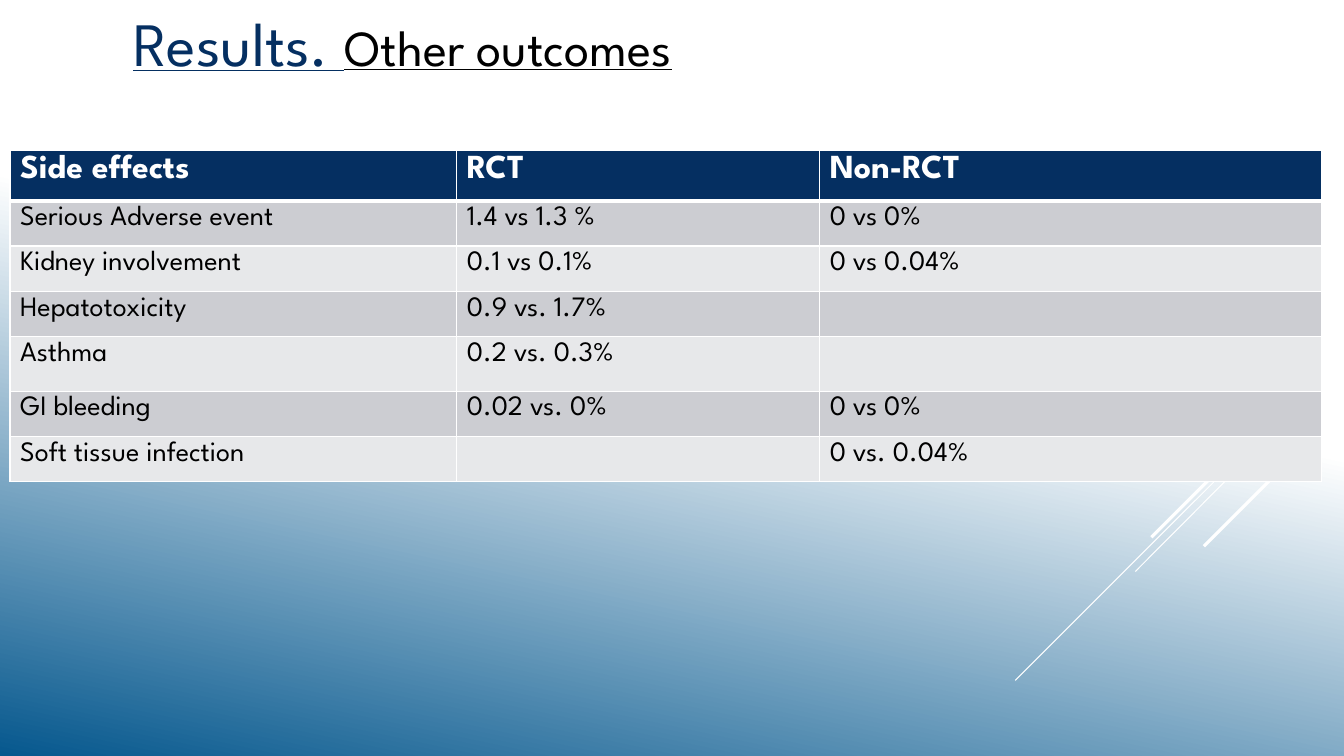
"""Build the slide with the table of side effects in RCT and non-RCT studies."""
from lxml.etree import SubElement
from pptx import Presentation
from pptx.dml.color import RGBColor
from pptx.enum.text import MSO_ANCHOR, MSO_AUTO_SIZE, PP_ALIGN
from pptx.oxml.ns import qn
from pptx.util import Inches, Pt

NAVY = RGBColor(0x05, 0x2F, 0x61)
BLUE = RGBColor(0x06, 0x58, 0x8E)
WHITE = RGBColor(0xFF, 0xFF, 0xFF)
BLACK = RGBColor(0x00, 0x00, 0x00)
DARK_BAND = RGBColor(0xCC, 0xCD, 0xD2)
LIGHT_BAND = RGBColor(0xE7, 0xE8, 0xEA)
FONT = "League Spartan"


def add_span(para, text, size, color, bold=False, underline=False):
    span = para.add_run()
    span.text = text
    span.font.name = FONT
    span.font.size = Pt(size)
    span.font.color.rgb = color
    span.font.bold = bold
    span.font.underline = underline


def set_border(cell, side, width):
    border = SubElement(cell._tc.get_or_add_tcPr(), qn(f"a:{side}"), w=str(Pt(width)))
    fill = SubElement(border, qn("a:solidFill"))
    SubElement(fill, qn("a:srgbClr"), val=str(WHITE))


deck = Presentation()
deck.slide_width = Inches(13.33)
deck.slide_height = Inches(7.5)
page = deck.slides.add_slide(deck.slide_layouts[5])

backdrop = page.background.fill
backdrop.gradient()
backdrop.gradient_angle = 258
for stop, position, color in zip(backdrop.gradient_stops, (0.44, 1), (WHITE, BLUE)):
    stop.position = position
    stop.color.rgb = color

rays = [
    (3.24, 12.33, 4.24, 0.75),
    (3.49, 10.07, 6.75, 0.75),
    (3.59, 11.26, 5.67, 0.75),
    (3.42, 11.42, 5.33, 2.25),
    (4.03, 11.94, 5.42, 2.25),
]
for top, end_x, end_y, width in rays:
    ray = page.shapes.add_connector(
        1, Inches(13.33), Inches(top), Inches(end_x), Inches(end_y))
    ray.line.color.rgb = WHITE
    ray.line.width = Pt(width)
    SubElement(ray._element.spPr, qn("a:effectLst"))

title = page.shapes.title
title.left, title.top = Inches(1.22), Inches(0)
title.width, title.height = Inches(6.51), Inches(0.84)
frame = title.text_frame
frame.word_wrap = False
frame.auto_size = MSO_AUTO_SIZE.SHAPE_TO_FIT_TEXT
frame.vertical_anchor = MSO_ANCHOR.TOP
para = frame.paragraphs[0]
para.alignment = PP_ALIGN.LEFT
add_span(para, "Results. ", 44, NAVY, underline=True)
add_span(para, "Other outcomes", 36, BLACK, underline=True)

rows = [
    ("Side effects", "RCT", "Non-RCT"),
    ("Serious Adverse event", "1.4 vs 1.3 %", "0 vs 0%"),
    ("Kidney involvement", "0.1 vs 0.1%", "0 vs 0.04%"),
    ("Hepatotoxicity", "0.9 vs. 1.7%", ""),
    ("Asthma", "0.2 vs. 0.3%", ""),
    ("GI bleeding", "0.02 vs. 0%", "0 vs 0%"),
    ("Soft tissue infection", "", "0 vs. 0.04%"),
]
table = page.shapes.add_table(
    len(rows), 3, Inches(0.1), Inches(1.49), Inches(13.02), Inches(3.29)).table
for column, width in zip(table.columns, (4.43, 3.6, 4.98)):
    column.width = Inches(width)
for row_index, texts in enumerate(rows):
    header = row_index == 0
    table.rows[row_index].height = Inches(0.54 if texts[0] == "Asthma" else 0.45)
    band = NAVY if header else DARK_BAND if row_index % 2 else LIGHT_BAND
    for column_index, text in enumerate(texts):
        cell = table.cell(row_index, column_index)
        set_border(cell, "lnL", 1)
        set_border(cell, "lnR", 1)
        set_border(cell, "lnT", 3 if row_index == 1 else 1)
        set_border(cell, "lnB", 3 if header else 1)
        cell.fill.solid()
        cell.fill.fore_color.rgb = band
        if text:
            add_span(cell.text_frame.paragraphs[0], text, 24 if header else 20,
                     WHITE if header else BLACK, bold=header)

deck.save("out.pptx")
